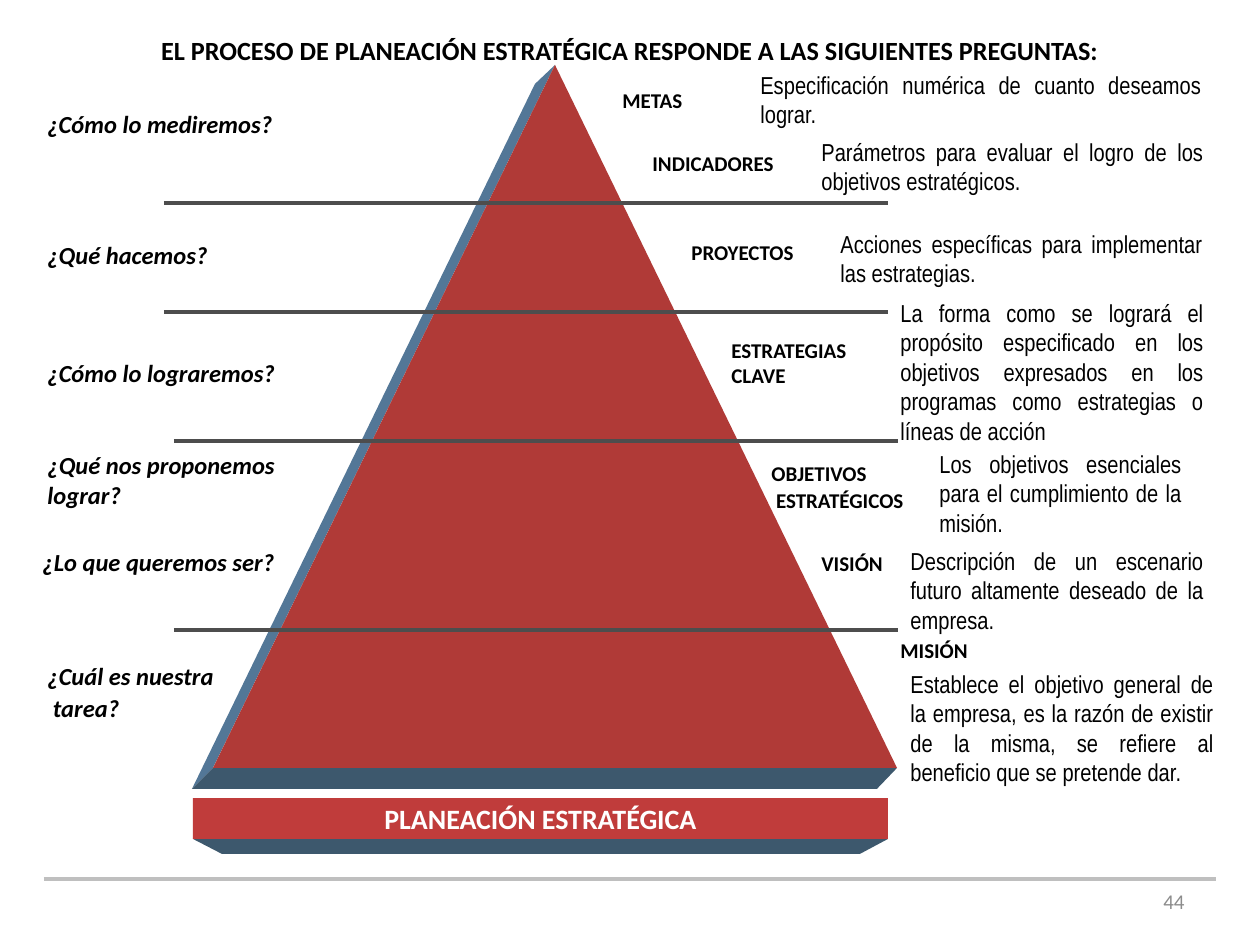
from dataclasses import dataclass
from lxml.etree import SubElement
from pptx import Presentation
from pptx.dml.color import RGBColor as RGB
from pptx.enum.shapes import MSO_CONNECTOR as CONN, MSO_SHAPE as SHAPE
from pptx.enum.text import MSO_ANCHOR as ANCHOR, PP_ALIGN as ALIGN
from pptx.oxml.ns import qn
from pptx.util import Emu, Pt


@dataclass(frozen=True)
class Theme:
    ink: str = "000000"
    white: str = "FFFFFF"
    front: str = "B03A37"
    bar: str = "C03C3B"
    side: str = "537797"
    base: str = "3D586D"
    divider: str = "4D4D4D"
    footer: str = "BFBFBF"
    number: str = "8C8C8C"
    heading: str = "Calibri"
    body: str = "Arial Narrow"
    small: int = 12
    medium: int = 14
    title: int = 15
    large: int = 16


T = Theme()
LABEL = dict(name=T.heading, size=T.small, bold=True)
QUESTION = dict(name=T.heading, size=T.medium, bold=True, italic=True)
BODY = dict(name=T.body, size=T.medium)
TITLE = dict(name=T.heading, size=T.title, bold=True)
BAR = dict(name=T.heading, size=T.large, bold=True, color=T.white)
NUMBER = dict(name=T.heading, size=T.small, color=T.number)


def px(n):
    return Emu(round(n * 914400 / 126))


class Deck:
    def __init__(self, w, h):
        self.prs = Presentation()
        self.prs.slide_width, self.prs.slide_height = px(w), px(h)
        self.s = self.prs.slides.add_slide(self.prs.slide_layouts[6])

    def paint(self, sp, color):
        sp.shadow.inherit = False
        sp.fill.solid()
        sp.fill.fore_color.rgb = RGB.from_string(color)
        sp.line.fill.background()
        return sp

    def fill_text(self, tf, text, fmt, align=ALIGN.LEFT, anchor=ANCHOR.TOP, spacing=1.0):
        tf.word_wrap = True
        tf.vertical_anchor = anchor
        for i, line in enumerate(text.split("\n")):
            p = tf.paragraphs[0] if i == 0 else tf.add_paragraph()
            p.alignment = align
            p.line_spacing = spacing
            if i and spacing < 1:
                p.space_before = Pt(round(0.35 * fmt["size"], 1))
            r = p.add_run()
            r.text = line
            style = {"color": T.ink, **fmt}
            r.font.color.rgb = RGB.from_string(style.pop("color"))
            style["size"] = Pt(style["size"])
            for key, value in style.items():
                setattr(r.font, key, value)

    def text(self, box, text, fmt, **layout):
        sp = self.s.shapes.add_textbox(*map(px, box))
        self.fill_text(sp.text_frame, text, fmt, **layout)

    def preset(self, kind, box, color):
        return self.paint(self.s.shapes.add_shape(kind, *map(px, box)), color)

    def polygon(self, points, color):
        pts = [(px(x), px(y)) for x, y in points]
        fb = self.s.shapes.build_freeform(*pts[0])
        fb.add_line_segments(pts[1:])
        self.paint(fb.convert_to_shape(), color)

    def rule(self, x1, x2, y, color, width):
        c = self.s.shapes.add_connector(CONN.STRAIGHT, px(x1), px(y), px(x2), px(y))
        c.line.color.rgb = RGB.from_string(color)
        c.line.width = Pt(width)
        SubElement(c._element.spPr, qn("a:effectLst"))


LABELS = [
    ((610, 81, 128, 38), "METAS", 1.0),
    ((640, 144, 208, 38), "INDICADORES", 1.0),
    ((679, 233, 208, 38), "PROYECTOS", 1.0),
    ((719, 331, 258, 63), "ESTRATEGIAS\nCLAVE", 1.0),
    ((759, 459, 328, 62), "OBJETIVOS\n ESTRATÉGICOS", 0.8),
    ((809, 544, 179, 38), "VISIÓN", 1.0),
    ((888, 631, 179, 38), "MISIÓN", 1.0),
]
QUESTIONS = [
    ((35, 103, 287, 72), "¿Cómo lo mediremos?", 1.0),
    ((35, 234, 287, 42), "¿Qué hacemos?", 1.0),
    ((35, 352, 307, 42), "¿Cómo lo lograremos?", 1.0),
    ((35, 444, 307, 72), "¿Qué nos proponemos lograr?", 1.0),
    ((30, 546, 333, 37), "¿Lo que queremos ser?", 0.8),
    ((35, 660, 357, 71), "¿Cuál es nuestra\n tarea?", 0.8),
]
ANSWERS = [
    ((748, 63, 466, 72), "Especificación numérica de cuanto deseamos lograr."),
    ((809, 130, 407, 72), "Parámetros para evaluar el logro de los objetivos estratégicos."),
    ((828, 222, 387, 72), "Acciones específicas para implementar las estrategias."),
    ((888, 291, 328, 161), "La forma como se logrará el propósito especificado en los objetivos "
                           "expresados en los programas como estrategias o líneas de acción"),
    ((927, 442, 267, 102), "Los objetivos esenciales para el cumplimiento de la misión."),
    ((898, 539, 318, 102), "Descripción de un escenario futuro altamente deseado de la empresa."),
    ((898, 662, 328, 131), "Establece el objetivo general de la empresa, es la razón de existir "
                           "de la misma, se refiere al beneficio que se pretende dar."),
]
DIVIDERS = [(164, 203), (164, 312), (174, 441), (174, 630)]


def main():
    d = Deck(1260, 945)
    d.rule(44, 1216, 879, T.footer, 2)
    d.text((903, 876, 294, 50), "44", NUMBER, align=ALIGN.RIGHT, anchor=ANCHOR.MIDDLE)

    d.polygon([(555, 65), (535, 84), (192, 789), (213, 768)], T.side)
    d.polygon([(213, 768), (897, 768), (877, 789), (192, 789)], T.base)
    d.preset(SHAPE.ISOSCELES_TRIANGLE, (213, 65, 684, 703), T.front)

    for box, text, spacing in LABELS:
        d.text(box, text, LABEL, spacing=spacing)
    for box, text, spacing in QUESTIONS:
        d.text(box, text, QUESTION, spacing=spacing)
    for x, y in DIVIDERS:
        d.rule(x, x + 724, y, T.divider, 2.25)
    for box, text in ANSWERS:
        d.text(box, text, BODY, align=ALIGN.JUSTIFY, anchor=ANCHOR.MIDDLE)

    d.text((0, 28, 1260, 44),
           "EL PROCESO DE PLANEACIÓN ESTRATÉGICA RESPONDE A LAS SIGUIENTES PREGUNTAS:",
           TITLE, align=ALIGN.CENTER, anchor=ANCHOR.MIDDLE)
    d.polygon([(193, 839), (888, 839), (860, 854), (222, 854)], T.base)
    bar = d.preset(SHAPE.RECTANGLE, (193, 798, 695, 41), T.bar)
    d.fill_text(bar.text_frame, "PLANEACIÓN ESTRATÉGICA", BAR,
                align=ALIGN.CENTER, anchor=ANCHOR.MIDDLE)
    d.prs.save("out.pptx")


if __name__ == "__main__":
    main()
